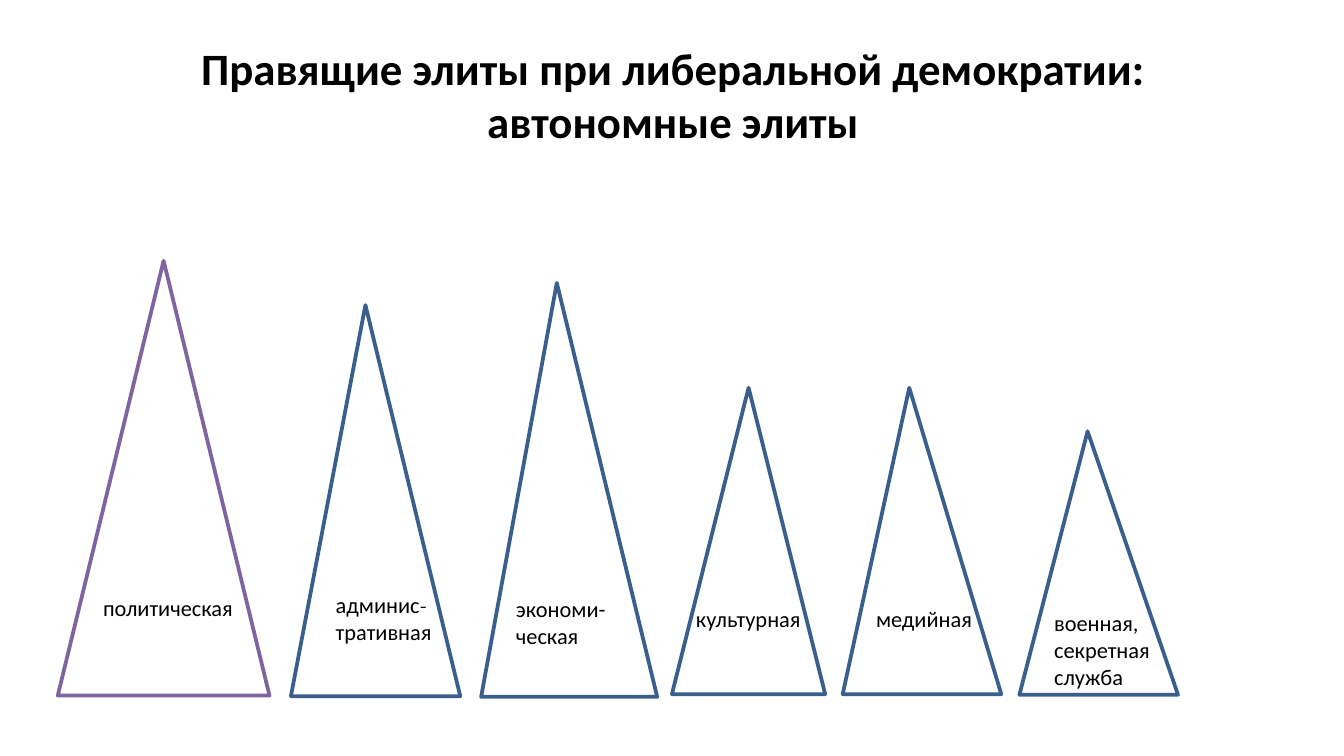
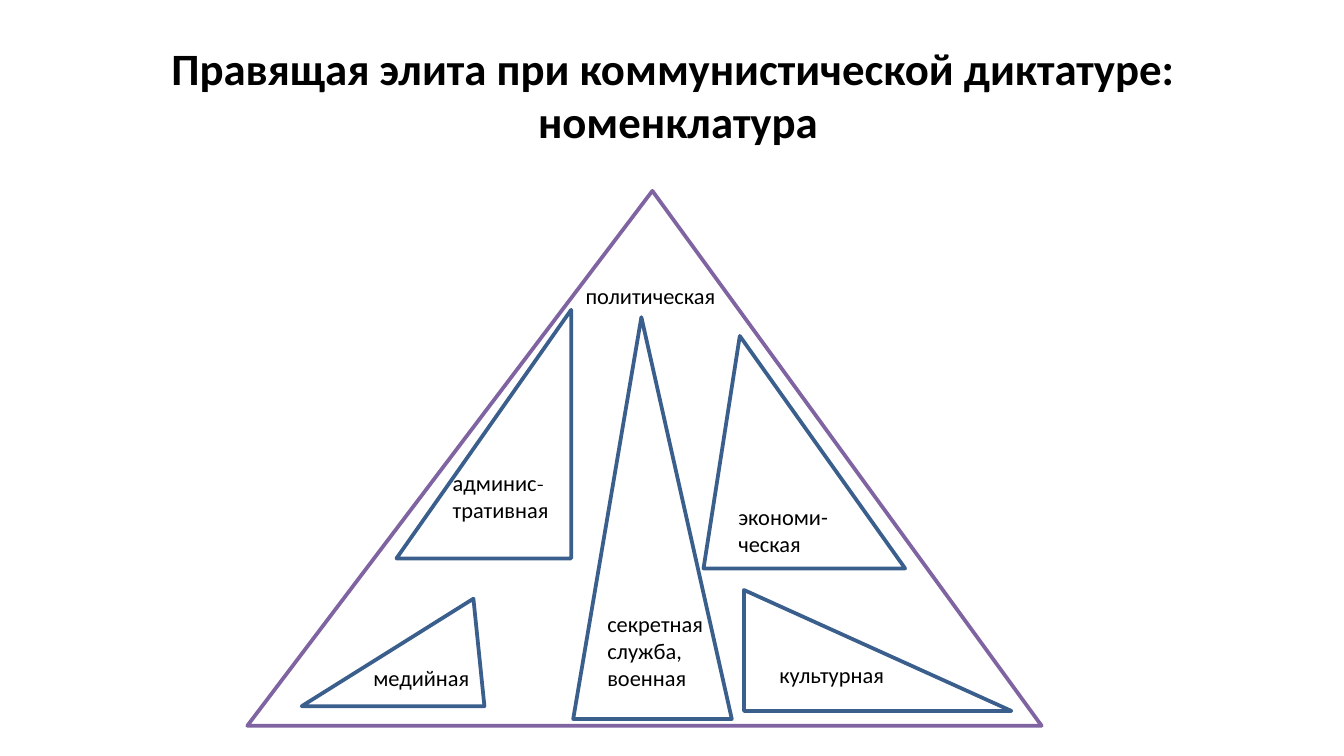
import dataclasses
import typing

import pptx
import pptx.dml.color
import pptx.enum.shapes
import pptx.enum.text
import pptx.util

PX = 4572
FONT = "Calibri"
COLORS = {"text": "000000", "elite": "3A5F8C", "political": "8064A2"}
ALIGN = pptx.enum.text.PP_ALIGN
Box = tuple[int, int, int, int]
TITLE_BOX: Box = (56, 46, 1906, 188)


@dataclasses.dataclass(frozen=True)
class Elite:
    label: str
    pyramid: Box
    caption: Box
    apex: float = 0.5
    align: ALIGN = ALIGN.LEFT
    political: bool = False


@dataclasses.dataclass(frozen=True)
class Regime:
    title: str
    elites: list[Elite]


REGIMES = [
    Regime(
        "Правящие элиты при либеральной демократии: \vавтономные элиты ",
        [
            Elite("политическая", (86, 388, 315, 647), (130, 874, 240, 60),
                  align=ALIGN.CENTER, political=True),
            Elite("админис˗\nтративная", (433, 454, 252, 582), (480, 870, 188, 100), 0.44),
            Elite("экономи-ческая", (716, 421, 262, 616), (748, 876, 204, 100), 0.43),
            Elite("культурная", (1000, 577, 228, 456), (1016, 891, 206, 60)),
            Elite("медийная", (1254, 577, 236, 456), (1284, 891, 188, 60), 0.42),
            Elite("военная,\nсекретная служба", (1517, 642, 236, 392), (1549, 897, 192, 142),
                  0.43),
        ],
    ),
    Regime(
        "Правящая элита при коммунистической диктатуре: \vноменклатура",
        [
            Elite("политическая", (368, 284, 1182, 796), (518, 410, 900, 74), 0.51,
                  align=ALIGN.CENTER, political=True),
            Elite("админис˗\nтративная", (590, 461, 260, 370), (654, 689, 196, 100), 1),
            Elite("экономи-ческая", (1047, 500, 300, 346), (1079, 739, 204, 100), 0.18),
            Elite("медийная", (449, 891, 272, 160), (536, 979, 208, 60), 0.94),
            Elite("культурная", (1107, 878, 398, 180), (1140, 974, 206, 60), 0),
            Elite("секретная служба,\nвоенная", (853, 472, 236, 598), (884, 898, 204, 142),
                  0.43, align=ALIGN.JUSTIFY),
        ],
    ),
]


def emu(box: Box) -> list[int]:
    return [length * PX for length in box]


def rgb(role: str) -> pptx.dml.color.RGBColor:
    return pptx.dml.color.RGBColor.from_string(COLORS[role])


def write(frame: typing.Any, text: str, size: int, align: ALIGN, bold: bool = False) -> None:
    frame.text = text
    frame.word_wrap = True
    for paragraph in frame.paragraphs:
        paragraph.alignment = align
        for run in paragraph.runs:
            run.font.name = FONT
            run.font.size = pptx.util.Pt(size)
            run.font.bold = bold
            run.font.color.rgb = rgb("text")


def draw_title(slide: typing.Any, text: str) -> None:
    title = slide.shapes.title
    title.left, title.top, title.width, title.height = emu(TITLE_BOX)
    write(title.text_frame, text, 24, ALIGN.CENTER, bold=True)
    title.text_frame.vertical_anchor = pptx.enum.text.MSO_ANCHOR.MIDDLE


def draw_elite(slide: typing.Any, elite: Elite) -> None:
    shapes = slide.shapes.add_group_shape().shapes if elite.political else slide.shapes
    pyramid = shapes.add_shape(
        pptx.enum.shapes.MSO_SHAPE.ISOSCELES_TRIANGLE, *emu(elite.pyramid)
    )
    pyramid.adjustments[0] = elite.apex
    pyramid.shadow.inherit = False
    pyramid.fill.background()
    pyramid.line.color.rgb = rgb("political" if elite.political else "elite")
    pyramid.line.width = pptx.util.Pt(2)

    caption = shapes.add_textbox(*emu(elite.caption)).text_frame
    write(caption, elite.label, 12, elite.align)
    caption.auto_size = pptx.enum.text.MSO_AUTO_SIZE.SHAPE_TO_FIT_TEXT


def main() -> None:
    deck = pptx.Presentation()
    deck.slide_width, deck.slide_height = emu((0, 0, 2000, 1125))[2:]
    for regime in REGIMES:
        slide = deck.slides.add_slide(deck.slide_layouts.get_by_name("Title Only"))
        draw_title(slide, regime.title)
        for elite in regime.elites:
            draw_elite(slide, elite)
    deck.save("out.pptx")


if __name__ == "__main__":
    main()
